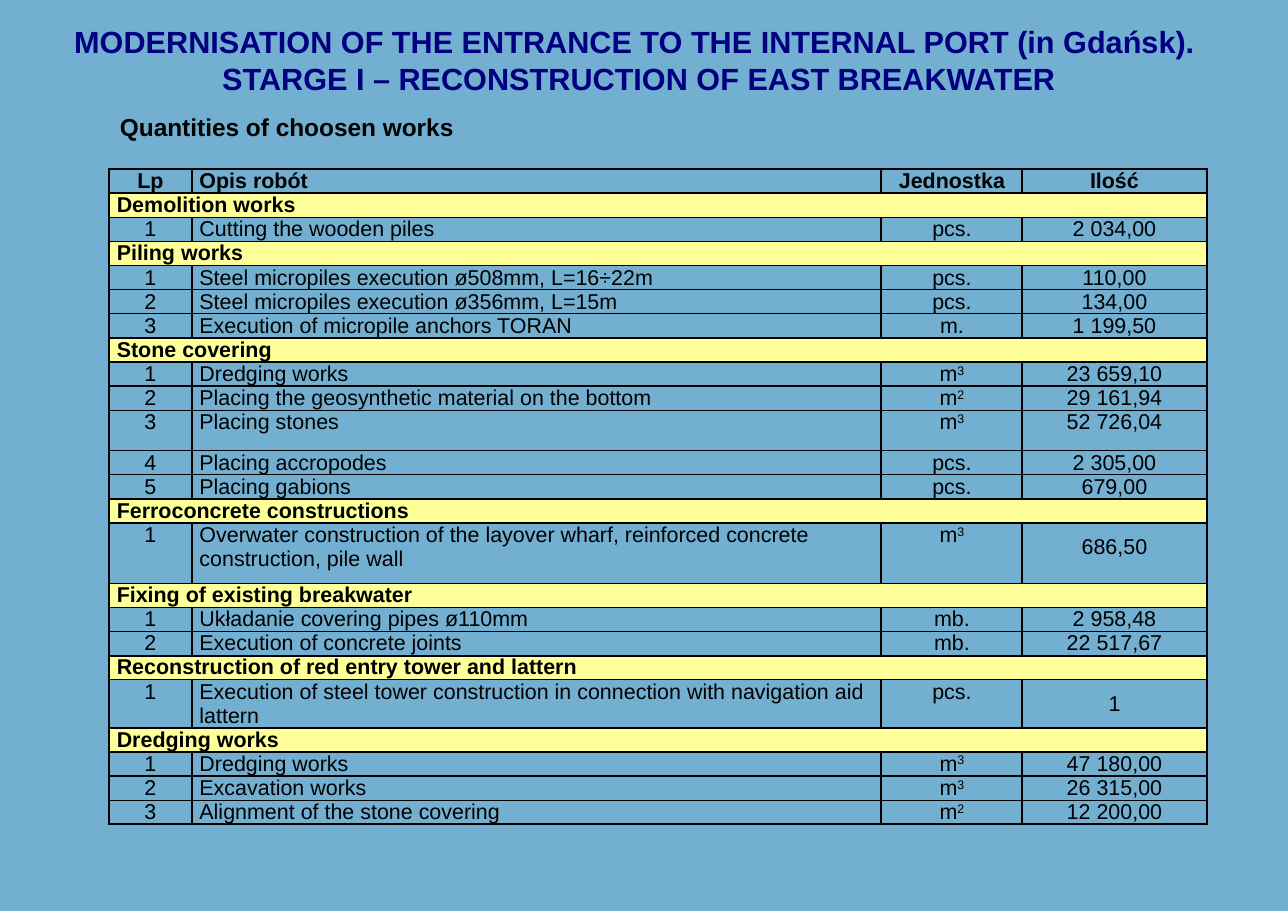
"""Build the slide listing quantities of works for the east breakwater."""
from dataclasses import dataclass

from lxml import etree
from pptx import Presentation
from pptx.dml.color import RGBColor
from pptx.enum.text import MSO_AUTO_SIZE, PP_ALIGN
from pptx.oxml.ns import qn
from pptx.util import Emu, Inches, Pt

LEFT, CENTER = PP_ALIGN.LEFT, PP_ALIGN.CENTER
GROW = MSO_AUTO_SIZE.SHAPE_TO_FIT_TEXT
SLIDE_W, SLIDE_H = Inches(11.69), Inches(8.27)


@dataclass(frozen=True)
class Theme:
    font: str = "Arial"
    ground: str = "72AFD0"
    title: str = "000080"
    ink: str = "000000"
    band: str = "FFFF99"
    title_size: float = 20
    subtitle_size: float = 16
    table_size: float = 14
    thin: float = 1
    thick: float = 1.5


@dataclass(frozen=True)
class Box:
    """Place on the slide in percent of its width and height."""
    left: float
    top: float
    width: float
    height: float

    def emu(self) -> tuple[Emu, Emu, Emu, Emu]:
        return (across(self.left), down(self.top),
                across(self.width), down(self.height))


@dataclass(frozen=True)
class Label:
    box: Box
    lines: tuple[str, ...]
    size: float
    color: str
    align: PP_ALIGN = LEFT
    wrap: bool = True


@dataclass(frozen=True)
class Row:
    """A table row; one cell makes a section band."""
    cells: tuple[str, ...]
    height: float = 2.3
    bold: bool = False
    top: float = 1
    bottom: float = 1
    spacing: float | None = None


THEME = Theme()
THICK = THEME.thick
COLUMNS = (6.42, 53.55, 10.95, 14.29)
ALIGNS = (CENTER, LEFT, CENTER, CENTER)
TABLE_BOX = Box(8.47, 18.56, sum(COLUMNS), 75.94)
LABELS = (
    Label(Box(8.47, 11.73, 68.35, 4.47), ("Quantities of choosen works",),
          THEME.subtitle_size, THEME.ink),
    Label(Box(4.53, 1.93, 90.16, 9.31),
          ("MODERNISATION OF THE ENTRANCE TO THE INTERNAL PORT (in Gdańsk). ",
           "STARGE I – RECONSTRUCTION OF EAST BREAKWATER"),
          THEME.title_size, THEME.title, CENTER, False),
)


def section(name: str, top: float = THEME.thin) -> Row:
    return Row((name,), bold=True, top=top)


ROWS = (
    Row(("Lp", "Opis robót", "Jednostka", "Ilość"), bold=True, top=THICK, bottom=THICK),
    section("Demolition works", THICK),
    Row(("1", "Cutting the wooden piles", "pcs.", "2 034,00")),
    section("Piling works"),
    Row(("1", "Steel micropiles execution ø508mm, L=16÷22m", "pcs.", "110,00")),
    Row(("2", "Steel micropiles execution ø356mm, L=15m", "pcs.", "134,00")),
    Row(("3", "Execution of micropile anchors TORAN", "m.", "1 199,50")),
    section("Stone covering"),
    Row(("1", "Dredging works", "m^3", "23 659,10")),
    Row(("2", "Placing the geosynthetic material on the bottom", "m^2", "29 161,94")),
    Row(("3", "Placing stones", "m^3", "52 726,04"), height=4.45),
    Row(("4", "Placing accropodes", "pcs.", "2 305,00")),
    Row(("5", "Placing gabions", "pcs.", "679,00")),
    section("Ferroconcrete constructions"),
    Row(("1", "Overwater construction of the layover wharf, reinforced concrete "
         "construction, pile wall", "m^3", "686,50"), height=6.6, spacing=1.5),
    section("Fixing of existing breakwater"),
    Row(("1", "Układanie covering pipes ø110mm", "mb.", "2 958,48")),
    Row(("2", "Execution of concrete joints", "mb.", "22 517,67"), bottom=THICK),
    section("Reconstruction of red entry tower and lattern", THICK),
    Row(("1", "Execution of steel tower construction in connection with navigation aid "
         "lattern", "pcs.", "1"), height=4.45, bottom=THICK, spacing=1.5),
    section("Dredging works", THICK),
    Row(("1", "Dredging works", "m^3", "47 180,00")),
    Row(("2", "Excavation works", "m^3", "26 315,00")),
    Row(("3", "Alignment of the stone covering", "m^2", "12 200,00"), bottom=THICK),
)


def across(percent: float) -> Emu:
    return Emu(round(SLIDE_W * percent / 100))


def down(percent: float) -> Emu:
    return Emu(round(SLIDE_H * percent / 100))


def style_runs(p, size: float, color: str, bold: bool) -> None:
    for r in p.runs:
        r.font.name = THEME.font
        r.font.size = Pt(size)
        r.font.bold = bold
        r.font.color.rgb = RGBColor.from_string(color)


def add_label(slide, label: Label) -> None:
    tf = slide.shapes.add_textbox(*label.box.emu()).text_frame
    tf.word_wrap = label.wrap
    tf.auto_size = GROW
    tf.text = "\n".join(label.lines)
    for p in tf.paragraphs:
        p.alignment = label.align
        style_runs(p, label.size, label.color, True)


def set_borders(cell, row: Row) -> None:
    tcPr = cell._tc.get_or_add_tcPr()
    widths = {"a:lnL": THICK, "a:lnR": THICK, "a:lnT": row.top, "a:lnB": row.bottom}
    for tag, width in widths.items():
        ln = etree.SubElement(tcPr, qn(tag), w=str(Pt(width)))
        fill = etree.SubElement(ln, qn("a:solidFill"))
        etree.SubElement(fill, qn("a:srgbClr"), val=THEME.ink)


def write_cell(cell, text: str, align: PP_ALIGN, bold: bool) -> None:
    base, _, power = text.partition("^")
    p = cell.text_frame.paragraphs[0]
    p.text = base
    p.alignment = align
    if power:
        r = p.add_run()
        r.text = power
        r.font._element.set("baseline", "30000")
    style_runs(p, THEME.table_size, THEME.ink, bold)


def fill_row(cells: list, row: Row) -> None:
    is_section = len(row.cells) == 1
    if is_section:
        cells[0].merge(cells[-1])
    for cell in cells:
        cell.margin_left = cell.margin_right = Inches(0.07)
        cell.margin_top = cell.margin_bottom = 0
        set_borders(cell, row)
        if is_section:
            cell.fill.solid()
            cell.fill.fore_color.rgb = RGBColor.from_string(THEME.band)
        else:
            cell.fill.background()
    aligns = (LEFT,) if is_section else ALIGNS
    for cell, text, align in zip(cells, row.cells, aligns):
        write_cell(cell, text, align, row.bold)
    if row.spacing:
        cells[-1].text_frame.paragraphs[0].line_spacing = row.spacing


def add_works_table(slide) -> None:
    sp = slide.shapes.add_table(len(ROWS), len(COLUMNS), *TABLE_BOX.emu())
    table = sp.table
    table.first_row = table.horz_banding = False
    for column, width in zip(table.columns, COLUMNS):
        column.width = across(width)
    for table_row, row in zip(table.rows, ROWS):
        table_row.height = down(row.height)
        fill_row(list(table_row.cells), row)
    sp.height = down(TABLE_BOX.height)


def main() -> None:
    prs = Presentation()
    prs.slide_width, prs.slide_height = SLIDE_W, SLIDE_H
    slide = prs.slides.add_slide(prs.slide_layouts[6])
    slide.background.fill.solid()
    slide.background.fill.fore_color.rgb = RGBColor.from_string(THEME.ground)
    add_works_table(slide)
    for label in LABELS:
        add_label(slide, label)
    prs.save("out.pptx")


if __name__ == "__main__":
    main()
